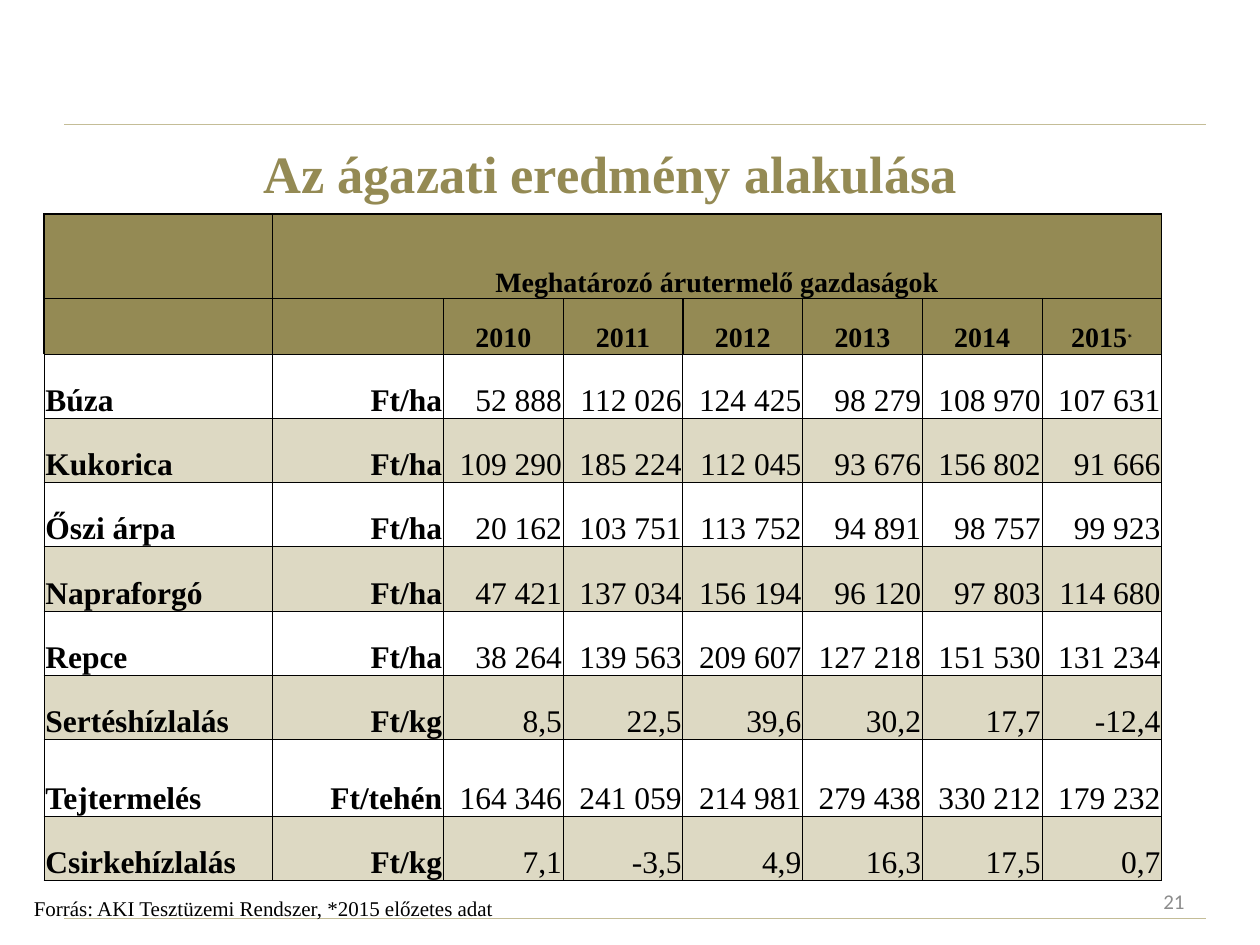
import dataclasses

import lxml.etree
import pptx
import pptx.dml.color
import pptx.enum.shapes
import pptx.enum.text
import pptx.oxml.ns
import pptx.util

Inches = pptx.util.Inches
Pt = pptx.util.Pt
Align = pptx.enum.text.PP_ALIGN
Anchor = pptx.enum.text.MSO_ANCHOR
qn = pptx.oxml.ns.qn

TITLE = "Az ágazati eredmény alakulása"
SOURCE = "Forrás: AKI Tesztüzemi Rendszer, *2015 előzetes adat"
PAGE_NUMBER = "21"
GROUP = "Meghatározó árutermelő gazdaságok"
YEARS = ["2010", "2011", "2012", "2013", "2014", "2015"]
PRELIMINARY_MARK = "*"
SECTORS = [
    ("Búza", "Ft/ha", "52 888", "112 026", "124 425", "98 279", "108 970", "107 631"),
    ("Kukorica", "Ft/ha", "109 290", "185 224", "112 045", "93 676", "156 802", "91 666"),
    ("Őszi árpa", "Ft/ha", "20 162", "103 751", "113 752", "94 891", "98 757", "99 923"),
    ("Napraforgó", "Ft/ha", "47 421", "137 034", "156 194", "96 120", "97 803", "114 680"),
    ("Repce", "Ft/ha", "38 264", "139 563", "209 607", "127 218", "151 530", "131 234"),
    ("Sertéshízlalás", "Ft/kg", "8,5", "22,5", "39,6", "30,2", "17,7", "-12,4"),
    ("Tejtermelés", "Ft/tehén", "164 346", "241 059", "214 981", "279 438", "330 212", "179 232"),
    ("Csirkehízlalás", "Ft/kg", "7,1", "-3,5", "4,9", "16,3", "17,5", "0,7"),
]
HEADER_ROWS = 2
LABEL_COLUMNS = 2
COLUMN_WIDTHS = [1.81, 1.36] + [0.95] * len(YEARS)
ROW_HEIGHTS = [0.67, 0.44] + [0.61 if row[0] == "Tejtermelés" else 0.51 for row in SECTORS]


@dataclasses.dataclass(frozen=True)
class Theme:
    serif: str = "Times New Roman"
    sans: str = "Calibri"
    olive: str = "948A54"
    rule: str = "C4BD97"
    band: str = "DDD9C3"
    ink: str = "000000"
    muted: str = "8C8C8C"
    title: int = 30
    body: int = 18
    header: int = 16
    small: int = 12
    mark: int = 11
    thin: float = 0.5
    thick: float = 1
    rule_width: float = 0.75


THEME = Theme()


def rgb(color):
    return pptx.dml.color.RGBColor.from_string(color)


def style(span, size, color=THEME.ink, bold=False, name=THEME.serif):
    span.font.size = Pt(size)
    span.font.name = name
    span.font.bold = bold
    span.font.color.rgb = rgb(color)


def write(frame, text, align, size, **look):
    frame.text = text
    para = frame.paragraphs[0]
    para.alignment = align
    style(para.runs[0], size, **look)


def add_rule(page, top):
    line = page.shapes.add_connector(
        pptx.enum.shapes.MSO_CONNECTOR.STRAIGHT,
        Inches(0.51), Inches(top), Inches(9.57), Inches(top))
    line.line.color.rgb = rgb(THEME.rule)
    line.line.width = Pt(THEME.rule_width)
    lxml.etree.SubElement(line._element.spPr, qn("a:effectLst"))


def add_title(page):
    box = page.shapes.title
    box.left, box.top, box.width, box.height = map(Inches, (0, 1.07, 9.69, 0.61))
    box.text_frame.vertical_anchor = Anchor.TOP
    write(box.text_frame, TITLE, Align.CENTER, THEME.title, color=THEME.olive, bold=True)


def add_caption(page, place, text, align, anchor, **look):
    box = page.shapes.add_textbox(*map(Inches, place))
    box.text_frame.word_wrap = True
    box.text_frame.vertical_anchor = anchor
    write(box.text_frame, text, align, THEME.small, **look)


def edge_widths(row, column):
    if row >= HEADER_ROWS:
        return dict.fromkeys("LRTB", THEME.thin)
    last = len(COLUMN_WIDTHS) if row == 0 and column else column + 1
    return {
        "L": THEME.thin if column % 2 else THEME.thick,
        "R": THEME.thin if last % 2 else THEME.thick,
        "T": THEME.thick,
        "B": THEME.thick if row == 0 else THEME.thin,
    }


def format_cell(cell, row, column):
    cell.margin_left = cell.margin_right = cell.margin_top = Inches(0.01)
    cell.margin_bottom = 0
    cell.vertical_anchor = Anchor.BOTTOM
    properties = cell._tc.get_or_add_tcPr()
    for side, width in edge_widths(row, column).items():
        edge = lxml.etree.SubElement(properties, qn("a:ln" + side), w=str(Pt(width)))
        fill = lxml.etree.SubElement(edge, qn("a:solidFill"))
        lxml.etree.SubElement(fill, qn("a:srgbClr"), val=THEME.ink)
    if row >= HEADER_ROWS and row % 2 == 0:
        cell.fill.background()
    else:
        cell.fill.solid()
        cell.fill.fore_color.rgb = rgb(THEME.olive if row < HEADER_ROWS else THEME.band)


def add_results(page):
    rows = [["", GROUP] + [""] * len(YEARS), ["", ""] + YEARS] + SECTORS
    table = page.shapes.add_table(
        len(rows), len(COLUMN_WIDTHS), Inches(0.35), Inches(1.7),
        Inches(sum(COLUMN_WIDTHS)), Inches(sum(ROW_HEIGHTS))).table
    table.first_row = table.horz_banding = False
    for column, width in zip(table.columns, COLUMN_WIDTHS):
        column.width = Inches(width)
    for line, height in zip(table.rows, ROW_HEIGHTS):
        line.height = Inches(height)
    table.cell(0, 1).merge(table.cell(0, len(COLUMN_WIDTHS) - 1))

    for r, texts in enumerate(rows):
        header = r < HEADER_ROWS
        for c, text in enumerate(texts):
            cell = table.cell(r, c)
            format_cell(cell, r, c)
            if text:
                align = Align.CENTER if header else Align.RIGHT if c else Align.LEFT
                write(cell.text_frame, text, align, THEME.header if header else THEME.body,
                      bold=header or c < LABEL_COLUMNS)

    mark = table.cell(1, len(COLUMN_WIDTHS) - 1).text_frame.paragraphs[0].add_run()
    mark.text = PRELIMINARY_MARK
    style(mark, THEME.mark, bold=True, name=THEME.sans)
    mark.font._element.set("baseline", "30000")


def main():
    deck = pptx.Presentation()
    deck.slide_width, deck.slide_height = Inches(10), Inches(7.5)
    page = deck.slides.add_slide(deck.slide_layouts[5])
    for top in (7.29, 0.99):
        add_rule(page, top)
    add_title(page)
    add_caption(page, (0.17, 7.06, 4.44, 0.3), SOURCE, Align.LEFT, Anchor.TOP)
    add_caption(page, (7.17, 6.95, 2.33, 0.4), PAGE_NUMBER, Align.RIGHT, Anchor.MIDDLE,
                color=THEME.muted, name=THEME.sans)
    add_results(page)
    deck.save("out.pptx")


if __name__ == "__main__":
    main()
